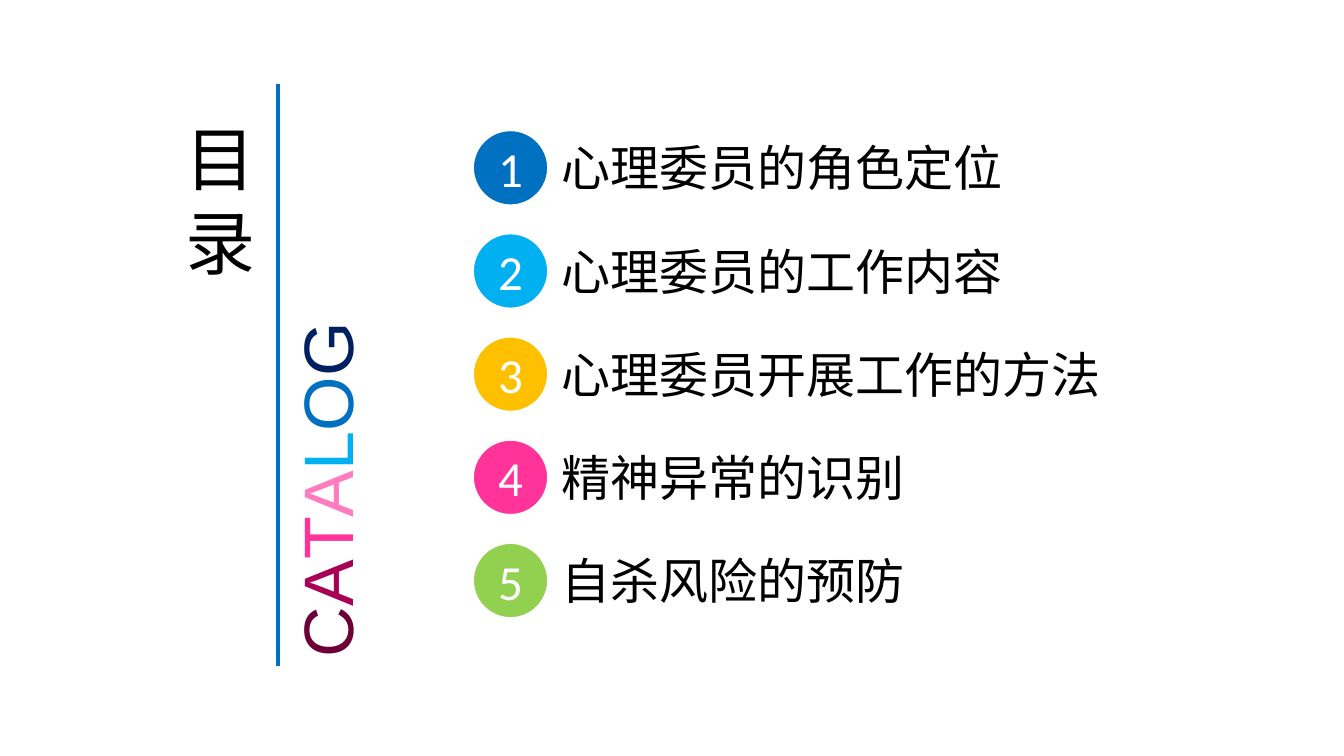
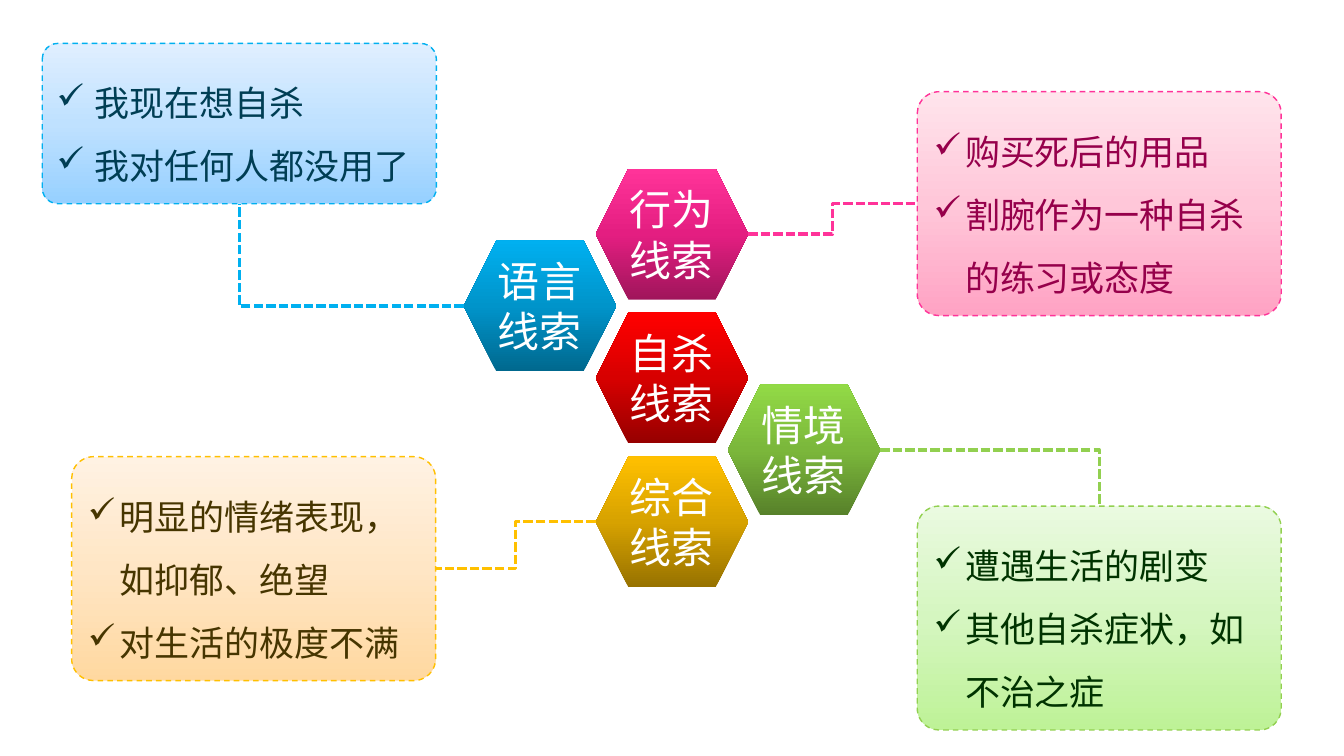
from copy import deepcopy
from dataclasses import dataclass

from lxml import etree
from pptx import Presentation
from pptx.dml.color import RGBColor
from pptx.enum.dml import MSO_LINE
from pptx.enum.shapes import MSO_CONNECTOR, MSO_SHAPE
from pptx.enum.text import MSO_ANCHOR, MSO_AUTO_SIZE, PP_ALIGN
from pptx.oxml.ns import qn
from pptx.util import Pt

CENTER, LEFT = PP_ALIGN.CENTER, PP_ALIGN.LEFT
TOP, MIDDLE = MSO_ANCHOR.TOP, MSO_ANCHOR.MIDDLE
STRAIGHT, ELBOW = MSO_CONNECTOR.STRAIGHT, MSO_CONNECTOR.ELBOW
ELLIPSE, HEXAGON = MSO_SHAPE.OVAL, MSO_SHAPE.HEXAGON
ROUNDED = MSO_SHAPE.ROUNDED_RECTANGLE
DASH, SHORT_DASH = MSO_LINE.DASH, MSO_LINE.SQUARE_DOT
TITLE_ONLY, BLANK = 5, 6

CHINESE, LATIN, DIGITS = "Noto Sans CJK SC", "Arial", "Calibri"

WHITE = RGBColor(0xFF, 0xFF, 0xFF)
BLACK = RGBColor(0x00, 0x00, 0x00)
BLUE = RGBColor(0x00, 0x70, 0xC0)
SKY = RGBColor(0x00, 0xB0, 0xF0)
AMBER = RGBColor(0xFF, 0xC0, 0x00)
PINK = RGBColor(0xFF, 0x33, 0x99)
GREEN = RGBColor(0x92, 0xD0, 0x50)
NAVY = RGBColor(0x00, 0x20, 0x60)
WINE = RGBColor(0x6C, 0x00, 0x36)
MAGENTA = RGBColor(0xA8, 0x00, 0x54)
ROSE = RGBColor(0xFF, 0x7D, 0xBE)
SKY_TEXT = RGBColor(0x00, 0x3E, 0x54)
PINK_TEXT = RGBColor(0x96, 0x00, 0x4B)
GREEN_TEXT = RGBColor(0x00, 0x33, 0x00)
AMBER_TEXT = RGBColor(0x46, 0x35, 0x00)


def ramp(*codes: str) -> list[RGBColor]:
    """Gradient colours from bottom to top."""
    return [RGBColor.from_string(code) for code in codes]


RED_RAMP = ramp("970000", "D70000", "FF0000")
SKY_RAMP = ramp("00688E", "0094CA", "00B0F0")
PINK_RAMP = ramp("A0155B", "E41E81", "FF3399")
GREEN_RAMP = ramp("57812A", "7BB73B", "92DA46")
AMBER_RAMP = ramp("977200", "D7A200", "FFC000")
PALE_SKY = ramp("96D0FF", "BFE1FF", "E0EFFF")
PALE_PINK = ramp("FFA3C4", "FFC7D9", "FFE4EC")
PALE_GREEN = ramp("BEF297", "D5F6C0", "EAFAE0")
PALE_AMBER = ramp("FFD8A0", "FFE6C5", "FFF2E3")


@dataclass
class Box:
    left: float
    top: float
    width: float
    height: float

    def lengths(self) -> list[int]:
        return [Pt(self.left), Pt(self.top), Pt(self.width), Pt(self.height)]

    def point(self, across: float, down: float) -> tuple[float, float]:
        """Place inside the box, given as fractions of its size."""
        return self.left + across * self.width, self.top + down * self.height


@dataclass
class Chapter:
    name: str
    color: RGBColor


@dataclass
class Clue:
    name: str
    column: int
    row: int
    hexagon_ramp: list[RGBColor]
    accent: RGBColor
    card: Box
    card_ramp: list[RGBColor]
    text_color: RGBColor
    anchor: tuple[float, float]
    signs: list[str]
    indent: float = 22.5


CHAPTERS = [
    Chapter("心理委员的角色定位", BLUE),
    Chapter("心理委员的工作内容", SKY),
    Chapter("心理委员开展工作的方法", AMBER),
    Chapter("精神异常的识别", PINK),
    Chapter("自杀风险的预防", GREEN),
]
CATALOG = list(zip("CATALOG", [WINE, MAGENTA, PINK, ROSE, SKY, BLUE, NAVY]))
CLUES = [
    Clue("行为线索", 0, 0, PINK_RAMP, PINK, Box(655.2, 65.5, 260, 160),
         PALE_PINK, PINK_TEXT, (0, 0.5),
         ["购买死后的用品", "割腕作为一种自杀的练习或态度"]),
    Clue("语言线索", -1, 1, SKY_RAMP, SKY, Box(30.2, 31, 281.5, 114.5),
         PALE_SKY, SKY_TEXT, (0.5, 1),
         ["我现在想自杀", "我对任何人都没用了"], indent=27),
    Clue("情境线索", 1, 3, GREEN_RAMP, GREEN, Box(655.2, 361.5, 260, 160),
         PALE_GREEN, GREEN_TEXT, (0.5, 0),
         ["遭遇生活的剧变", "其他自杀症状，如不治之症"]),
    Clue("综合线索", 0, 4, AMBER_RAMP, AMBER, Box(51.2, 326.2, 260, 160),
         PALE_AMBER, AMBER_TEXT, (1, 0.5),
         ["明显的情绪表现，如抑郁、绝望", "对生活的极度不满"]),
]


def apply(target, values: dict) -> None:
    for name, value in values.items():
        setattr(target, name, value)


def write(para, text: str, size: float, color: RGBColor, font: str = CHINESE) -> None:
    """Add a run whose font also covers East Asian characters."""
    span = para.add_run()
    span.text = text
    apply(span.font, {"size": Pt(size), "name": font, "bold": False})
    span.font.color.rgb = color
    east_asian = etree.SubElement(span.font._element, qn("a:ea"))
    east_asian.set("typeface", font)


def add_shape(page, kind, box: Box, inset: float):
    shape = page.shapes.add_shape(kind, *box.lengths())
    shape.shadow.inherit = False
    margin = Pt(inset)
    apply(shape.text_frame, {
        "word_wrap": True, "vertical_anchor": MIDDLE,
        "margin_left": margin, "margin_right": margin,
    })
    return shape


def add_text_box(page, box: Box):
    frame = page.shapes.add_textbox(*box.lengths())
    apply(frame.text_frame, {"word_wrap": False, "vertical_anchor": TOP})
    return frame


def fill_gradient(shape, colors: list[RGBColor]) -> None:
    """Fill with three evenly spaced colours running upwards."""
    shape.fill.gradient()
    shape.fill.gradient_angle = 90
    stops = shape._element.spPr.find(".//" + qn("a:gsLst"))
    stops.insert(1, deepcopy(stops[0]))
    for index, (stop, color) in enumerate(zip(shape.fill.gradient_stops, colors)):
        stop.color.rgb = color
        stop.position = index / 2


def add_line(page, kind, start, end, color: RGBColor, width: float):
    line = page.shapes.add_connector(kind, *[Pt(value) for value in (*start, *end)])
    line.line.color.rgb = color
    line.line.width = Pt(width)
    etree.SubElement(line._element.spPr, qn("a:effectLst"))
    return line


def add_bullet(para, indent: float) -> None:
    properties = para._p.get_or_add_pPr()
    properties.set("marL", str(Pt(indent)))
    properties.set("indent", str(-Pt(indent)))
    etree.SubElement(properties, qn("a:buChar")).set("char", "✓")


def add_title(page) -> None:
    title = page.shapes.title
    box = Box(124.5, 79, 66.5, 136)
    apply(title, dict(zip(("left", "top", "width", "height"), box.lengths())))
    apply(title.text_frame, {
        "word_wrap": True, "vertical_anchor": TOP, "auto_size": MSO_AUTO_SIZE.NONE,
    })
    para = title.text_frame.paragraphs[0]
    para.alignment = CENTER
    write(para, "目录", 50, BLACK)


def add_catalog_word(page) -> None:
    """Coloured letters that read from bottom to top."""
    word = add_text_box(page, Box(198.7, 235.5, 75, 241))
    word.rotation = 180
    word.text_frame._txBody.bodyPr.set("vert", "eaVert")
    for letter, color in CATALOG:
        write(word.text_frame.paragraphs[0], letter, 50, color, LATIN)


def add_chapter(page, index: int, chapter: Chapter) -> None:
    top = 90.7 + 73.7 * index
    circle = add_shape(page, ELLIPSE, Box(335.5, top, 58.3, 58.3), 0)
    circle.fill.solid()
    circle.fill.fore_color.rgb = chapter.color
    circle.line.color.rgb = WHITE
    circle.line.width = Pt(6)
    number = circle.text_frame.paragraphs[0]
    number.alignment = CENTER
    write(number, str(index + 1), 35, WHITE, DIGITS)
    label = add_text_box(page, Box(393.8, top + 4.3, 28 + 35 * len(chapter.name), 49.7))
    write(label.text_frame.paragraphs[0], chapter.name, 35, BLACK)


def hexagon_box(column: int, row: int) -> Box:
    return Box(425.5 + 94.3 * column, 120.4 + 51.4 * row, 109, 93.6)


def add_hexagon(page, name: str, box: Box, colors: list[RGBColor]) -> None:
    hexagon = add_shape(page, HEXAGON, box, 0)
    fill_gradient(hexagon, colors)
    hexagon.line.fill.background()
    para = hexagon.text_frame.paragraphs[0]
    para.alignment = CENTER
    write(para, name, 30, WHITE)


def add_card(page, clue: Clue) -> None:
    card = add_shape(page, ROUNDED, clue.card, 7.2)
    card.adjustments[0] = 0.098
    fill_gradient(card, clue.card_ramp)
    card.line.color.rgb = clue.accent
    apply(card.line, {"width": Pt(1), "dash_style": DASH})
    for index, sign in enumerate(clue.signs):
        text = card.text_frame
        para = text.add_paragraph() if index else text.paragraphs[0]
        apply(para, {"alignment": LEFT, "line_spacing": 1.5})
        add_bullet(para, clue.indent)
        write(para, sign, 25, clue.text_color)


def add_link(page, clue: Clue, hexagon: Box) -> None:
    """Join a hexagon's outer corner to its card."""
    side = 0 if clue.card.left < hexagon.left else 1
    link = add_line(page, ELBOW, hexagon.point(side, 0.5),
                    clue.card.point(*clue.anchor), clue.accent, 2.25)
    link.line.dash_style = SHORT_DASH
    if clue.anchor[0] == 0.5:
        link._element.spPr.find(qn("a:prstGeom")).set("prst", "bentConnector2")


def build_contents(deck) -> None:
    page = deck.slides.add_slide(deck.slide_layouts[TITLE_ONLY])
    add_title(page)
    add_line(page, STRAIGHT, (198.7, 60), (198.7, 476), BLUE, 3)
    add_catalog_word(page)
    for index, chapter in enumerate(CHAPTERS):
        add_chapter(page, index, chapter)


def build_clues(deck) -> None:
    page = deck.slides.add_slide(deck.slide_layouts[BLANK])
    for clue in CLUES:
        hexagon = hexagon_box(clue.column, clue.row)
        add_hexagon(page, clue.name, hexagon, clue.hexagon_ramp)
        add_card(page, clue)
        add_link(page, clue, hexagon)
    add_hexagon(page, "自杀线索", hexagon_box(0, 2), RED_RAMP)


def main() -> None:
    deck = Presentation()
    apply(deck, {"slide_width": Pt(960), "slide_height": Pt(540)})
    build_contents(deck)
    build_clues(deck)
    deck.save("out.pptx")


if __name__ == "__main__":
    main()
